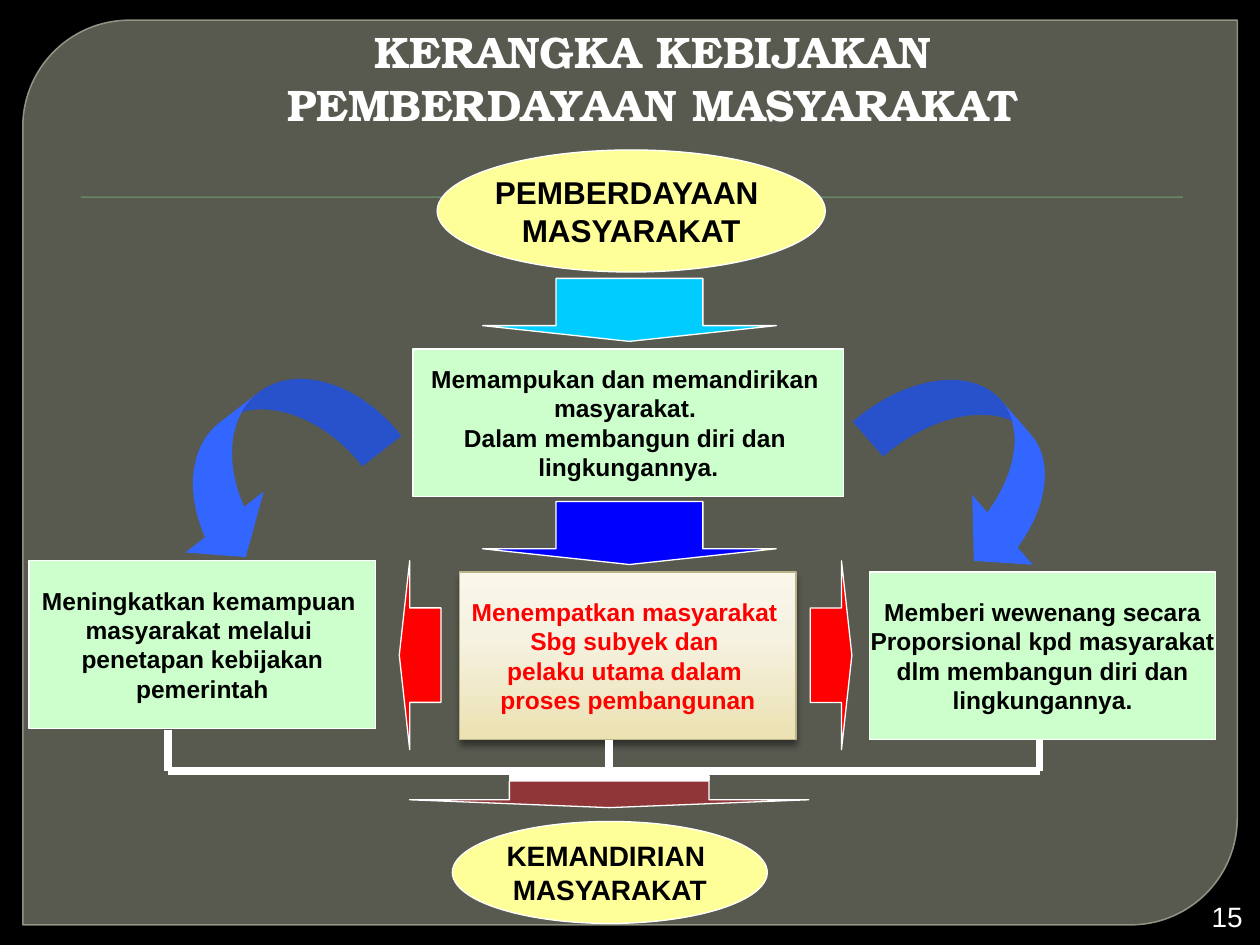
from copy import deepcopy

from lxml import etree
from pptx import Presentation
from pptx.dml.color import RGBColor
from pptx.enum.shapes import MSO_CONNECTOR, MSO_SHAPE
from pptx.enum.text import MSO_ANCHOR, PP_ALIGN
from pptx.oxml.ns import qn
from pptx.util import Pt

RECTANGLE, ELLIPSE = MSO_SHAPE.RECTANGLE, MSO_SHAPE.OVAL
FRAME = MSO_SHAPE.ROUND_2_DIAG_RECTANGLE
DOWN, LEFT = MSO_SHAPE.DOWN_ARROW, MSO_SHAPE.LEFT_ARROW
CURVED_RIGHT, CURVED_DOWN = MSO_SHAPE.CURVED_RIGHT_ARROW, MSO_SHAPE.CURVED_DOWN_ARROW
STRIPED = MSO_SHAPE.STRIPED_RIGHT_ARROW
STRAIGHT = MSO_CONNECTOR.STRAIGHT
CENTER, RIGHT = PP_ALIGN.CENTER, PP_ALIGN.RIGHT
MIDDLE, BOTTOM = MSO_ANCHOR.MIDDLE, MSO_ANCHOR.BOTTOM

BLACK = RGBColor(0x00, 0x00, 0x00)
WHITE = RGBColor(0xFF, 0xFF, 0xFF)
OLIVE = RGBColor(0x88, 0x8B, 0x7B)
OLIVE_EDGE = RGBColor(0x9D, 0xA0, 0x90)
RULE_GREEN = RGBColor(0x72, 0xA3, 0x76)
MINT = RGBColor(0xCC, 0xFF, 0xCC)
YELLOW = RGBColor(0xFF, 0xFF, 0x99)
CYAN = RGBColor(0x00, 0xCC, 0xFF)
BLUE = RGBColor(0x00, 0x00, 0xFF)
CURVE_BLUE = RGBColor(0x33, 0x66, 0xFF)
RED = RGBColor(0xFF, 0x00, 0x00)
MAROON = RGBColor(0x90, 0x36, 0x38)
SAND_EDGE = RGBColor(0xBB, 0xB3, 0x89)
SAND = [(0, RGBColor(0xEB, 0xE1, 0xB1)), (0.62, RGBColor(0xF6, 0xF2, 0xE2)),
        (1, RGBColor(0xF9, 0xF6, 0xEA))]


def write_text(shape, text, size=14, color=BLACK, font="Arial", bold=True,
               align=CENTER, anchor=MIDDLE, wrap=False, indent=0):
    """Write one paragraph per line; a vertical tab breaks a line."""
    frame = shape.text_frame
    frame.word_wrap = wrap
    frame.vertical_anchor = anchor
    frame.text = text
    for para in frame.paragraphs:
        para.alignment = align
        if indent:
            para._p.get_or_add_pPr().set("marL", str(Pt(indent)))
        for span in para.runs:
            span.font.name, span.font.size, span.font.bold = font, Pt(size), bold
            span.font.color.rgb = color


def add_text(page, box, text, **style):
    shape = page.shapes.add_textbox(*map(Pt, box))
    write_text(shape, text, **style)


def add_block(page, kind, box, fill, line=WHITE, width=0.75, rotation=0,
              text=None, **style):
    shape = page.shapes.add_shape(kind, *map(Pt, box))
    shape.shadow.inherit = False
    shape.rotation = rotation
    shape.fill.solid()
    shape.fill.fore_color.rgb = fill
    if line is None:
        shape.line.fill.background()
    else:
        shape.line.color.rgb = line
        shape.line.width = Pt(width)
    if text:
        write_text(shape, text, **style)
    return shape


def set_adjustments(shape, *values):
    for index, value in enumerate(values):
        shape.adjustments[index] = value


def set_alpha(color, percent):
    etree.SubElement(color, qn("a:alpha"), val=str(percent * 1000))


def add_shadow(shape, alpha, blur, distance):
    effects = shape._element.spPr.find(qn("a:effectLst"))
    shadow = etree.SubElement(effects, qn("a:outerShdw"), blurRad=str(Pt(blur)),
                              dist=str(Pt(distance)), dir="5400000", rotWithShape="0")
    set_alpha(etree.SubElement(shadow, qn("a:srgbClr"), val="000000"), alpha)


def set_gradient(shape, colors):
    shape.fill.gradient()
    shape.fill.gradient_angle = 90
    first = shape._element.spPr.find(".//" + qn("a:gs"))
    first.addnext(deepcopy(first))
    for stop, (position, color) in zip(shape.fill.gradient_stops, colors):
        stop.position = position
        stop.color.rgb = color


def add_line(page, x1, y1, x2, y2):
    line = page.shapes.add_connector(STRAIGHT, Pt(x1), Pt(y1), Pt(x2), Pt(y2))
    line.line.color.rgb = WHITE
    line.line.width = Pt(4.5)
    etree.SubElement(line._element.spPr, qn("a:effectLst"))


def draw_backdrop(page, box):
    left, top, width, height = box
    page.background.fill.solid()
    page.background.fill.fore_color.rgb = BLACK
    frame = add_block(page, FRAME, box, OLIVE, OLIVE_EDGE, 0.87)
    set_adjustments(frame, 0.118, 0)
    colors = frame._element.spPr.findall(".//" + qn("a:srgbClr"))
    for color, alpha in zip(colors, (65, 88)):
        set_alpha(color, alpha)
    rule = add_block(page, RECTANGLE, (left + 33, top + 100.8, width - 64, 0.7),
                     RULE_GREEN, None)
    add_shadow(rule, 75, 1, 1)


def draw_goal(page, box):
    """Yellow ellipse, cyan arrow, main aim and blue arrow, top to bottom."""
    left, top, width, height = box
    arrow_left = left + 39.8
    add_block(page, ELLIPSE, (left + 13.8, top, 221.8, 69.8), YELLOW,
              text="PEMBERDAYAAN \nMASYARAKAT", size=18)
    add_block(page, RECTANGLE, (left, top + 113.7, width, 84.2), MINT,
              text="Memampukan dan memandirikan \nmasyarakat. \n"
                   "Dalam membangun diri dan \nlingkungannya.")
    for offset, color in ((73.4, CYAN), (200.9, BLUE)):
        arrow = add_block(page, DOWN, (arrow_left, top + offset, 167.8, 36), color)
        set_adjustments(arrow, 0.5, 0.25)


def draw_policies(page, box):
    """Three policy boxes, with red arrows between them."""
    left, top, width, height = box
    side, tall = 198, 95.8
    add_block(page, RECTANGLE, (left, top, side, tall), MINT,
              text="Meningkatkan kemampuan \nmasyarakat melalui \n"
                   "penetapan kebijakan\npemerintah")
    middle = add_block(page, RECTANGLE, (left + 246.2, top + 6.5, 192.2, tall),
                       WHITE, SAND_EDGE, color=RED,
                       text="Menempatkan masyarakat \nSbg subyek dan \n"
                            "pelaku utama dalam \nproses pembangunan")
    set_gradient(middle, SAND)
    add_shadow(middle, 43, 4, 3)
    add_block(page, RECTANGLE, (left + width - side, top + 6.5, side, tall), MINT,
              text="Memberi wewenang secara\nProporsional kpd masyarakat\n"
                   "dlm membangun diri dan\nlingkungannya.")
    for offset, rotation in ((211.6, 0), (446.4, 180)):
        arrow = add_block(page, LEFT, (left + offset, top, 23.8, height), RED,
                          rotation=rotation)
        set_adjustments(arrow, 0.5, 0.25)


def draw_curves(page, box):
    """Curved arrows from the main aim to the outer policies."""
    left, top, width, height = box
    to_left = add_block(page, CURVED_RIGHT, (left, top, 69.8, height),
                        CURVE_BLUE, None, rotation=52.1)
    set_adjustments(to_left, 0.406, 0.812, 0.333)
    to_right = add_block(page, CURVED_DOWN, (left + width - 131.8, top + 36.7, 131.8, 72),
                         CURVE_BLUE, None, rotation=49)
    set_adjustments(to_right, 0.367, 0.733, 0.333)


def draw_result(page, box):
    """Bracket under the policies, striped arrow and closing ellipse."""
    left, top, width, height = box
    center, bar = left + 252, top + 23.7
    add_block(page, ELLIPSE, (center - 89.3, top + 52.5, 180, 58.3), YELLOW,
              text="KEMANDIRIAN \nMASYARAKAT", size=16)
    for x, start in ((left, top), (center, top + 5.7), (left + width, top + 5.7)):
        add_line(page, x, start, x, bar)
    add_line(page, left, bar, left + width, bar)
    arrow = add_block(page, STRIPED, (center - 8.7, bar - 102.2, 18, 228.2), MAROON,
                      rotation=90)
    set_adjustments(arrow, 0.5, 0.25)


def main():
    deck = Presentation()
    deck.slide_width, deck.slide_height = Pt(720), Pt(540)
    page = deck.slides.add_slide(deck.slide_layouts[6])
    draw_backdrop(page, (13, 11.5, 694, 517))
    add_text(page, (131.8, 7.2, 478, 70.6),
             "KERANGKA KEBIJAKAN\vPEMBERDAYAAN MASYARAKAT", size=25.2, color=WHITE,
             font="TeX Gyre Bonum", anchor=BOTTOM, wrap=True, indent=4.3)
    add_text(page, (680.4, 512.6, 36.7, 21.6), "15", size=16, color=WHITE,
             bold=False, align=RIGHT, wrap=True)
    draw_goal(page, (236, 85.7, 246.2, 236.9))
    draw_policies(page, (16.6, 320.4, 678.2, 108))
    draw_curves(page, (117.4, 194.4, 506.2, 141.1))
    draw_result(page, (95.8, 416.9, 498.2, 110.8))
    deck.save("out.pptx")


if __name__ == "__main__":
    main()
